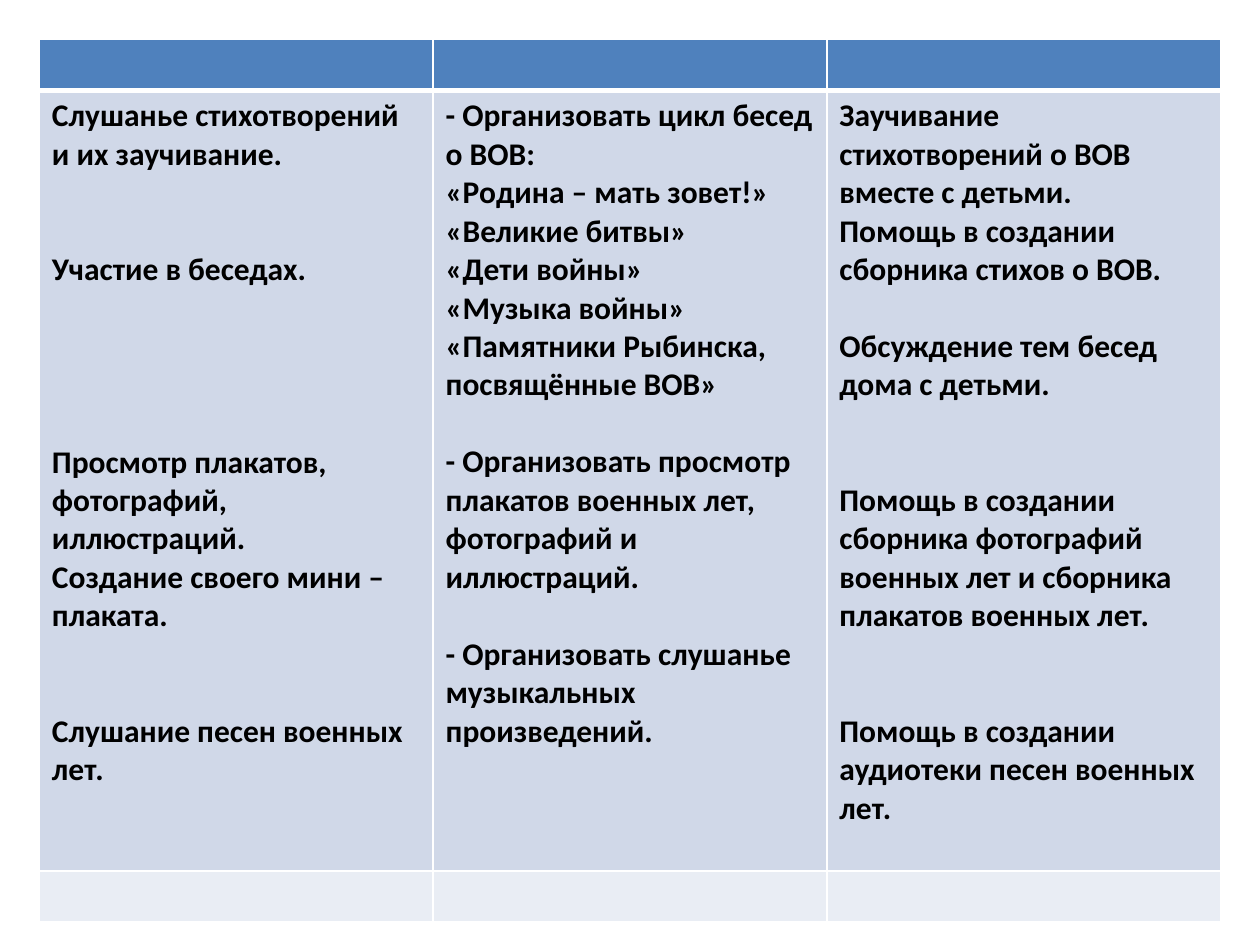
from dataclasses import dataclass

from lxml.etree import SubElement
from pptx import Presentation
from pptx.dml.color import RGBColor
from pptx.oxml.ns import qn
from pptx.util import Pt


@dataclass(frozen=True)
class Theme:
    font: str = "Calibri"
    text_size: int = 18
    line_height: int = 22
    text: str = "000000"
    border: str = "FFFFFF"
    row_fills: tuple = ("4F81BD", "D0D8E8", "E9EDF4")


THEME = Theme()
MARGIN = 22.5
COLUMN_WIDTH = 225
ROW_HEIGHTS = (29.2, 446, 29.2)
THIN, THICK = 1, 3

# Each column lists its paragraphs as (empty lines above, text).
CHILDREN = (
    (0, "Слушанье стихотворений и их заучивание."),
    (2, "Участие в беседах."),
    (4, "Просмотр плакатов, фотографий, иллюстраций."),
    (0, "Создание своего мини – плаката."),
    (2, "Слушание песен военных лет."),
)
TEACHERS = (
    (0, "- Организовать цикл бесед о ВОВ:"),
    (0, "«Родина – мать зовет!»"),
    (0, "«Великие битвы»"),
    (0, "«Дети войны»"),
    (0, "«Музыка войны»"),
    (0, "«Памятники Рыбинска, посвящённые ВОВ»"),
    (1, "- Организовать просмотр плакатов военных лет, фотографий и иллюстраций."),
    (1, "- Организовать слушанье музыкальных произведений."),
)
PARENTS = (
    (0, "Заучивание стихотворений о ВОВ вместе с детьми."),
    (0, "Помощь в создании сборника стихов о ВОВ."),
    (1, "Обсуждение тем бесед дома с детьми."),
    (2, "Помощь в создании сборника фотографий военных лет и сборника плакатов военных лет."),
    (2, "Помощь в создании аудиотеки песен военных лет."),
)


def write_text(paragraph, text, *, size=THEME.text_size, color=THEME.text,
               bold=True, space_before=0):
    paragraph.text = text
    if space_before:
        paragraph.space_before = Pt(space_before)
    font = paragraph.runs[0].font
    font.name = THEME.font
    font.size = Pt(size)
    font.bold = bold
    font.color.rgb = RGBColor.from_string(color)


def set_borders(cell, *, top=THIN, bottom=THIN):
    """Draw the cell's four borders; call before the fill to keep XML order."""
    properties = cell._tc.get_or_add_tcPr()
    for side, width in (("L", THIN), ("R", THIN), ("T", top), ("B", bottom)):
        line = SubElement(properties, qn(f"a:ln{side}"), w=str(Pt(width)))
        fill = SubElement(line, qn("a:solidFill"))
        SubElement(fill, qn("a:srgbClr"), val=THEME.border)


def fill_cell(cell, color):
    cell.fill.solid()
    cell.fill.fore_color.rgb = RGBColor.from_string(color)


def write_cell(cell, entries):
    frame = cell.text_frame
    for index, (empty_lines, text) in enumerate(entries):
        paragraph = frame.paragraphs[0] if index == 0 else frame.add_paragraph()
        write_text(paragraph, text, space_before=empty_lines * THEME.line_height)


def add_plan_table(slide, columns):
    table = slide.shapes.add_table(
        len(ROW_HEIGHTS), len(columns), Pt(MARGIN), Pt(MARGIN),
        Pt(COLUMN_WIDTH * len(columns)), Pt(sum(ROW_HEIGHTS))).table
    for column in table.columns:
        column.width = Pt(COLUMN_WIDTH)
    for index, (row, height) in enumerate(zip(table.rows, ROW_HEIGHTS)):
        row.height = Pt(height)
        for cell in row.cells:
            set_borders(cell, top=THICK if index == 1 else THIN,
                        bottom=THICK if index == 0 else THIN)
            fill_cell(cell, THEME.row_fills[index])
    for cell, entries in zip(table.rows[1].cells, columns):
        write_cell(cell, entries)


def main():
    presentation = Presentation()
    presentation.slide_width = Pt(720)
    presentation.slide_height = Pt(540)
    slide = presentation.slides.add_slide(presentation.slide_layouts[6])
    add_plan_table(slide, (CHILDREN, TEACHERS, PARENTS))
    presentation.save("out.pptx")


if __name__ == "__main__":
    main()
